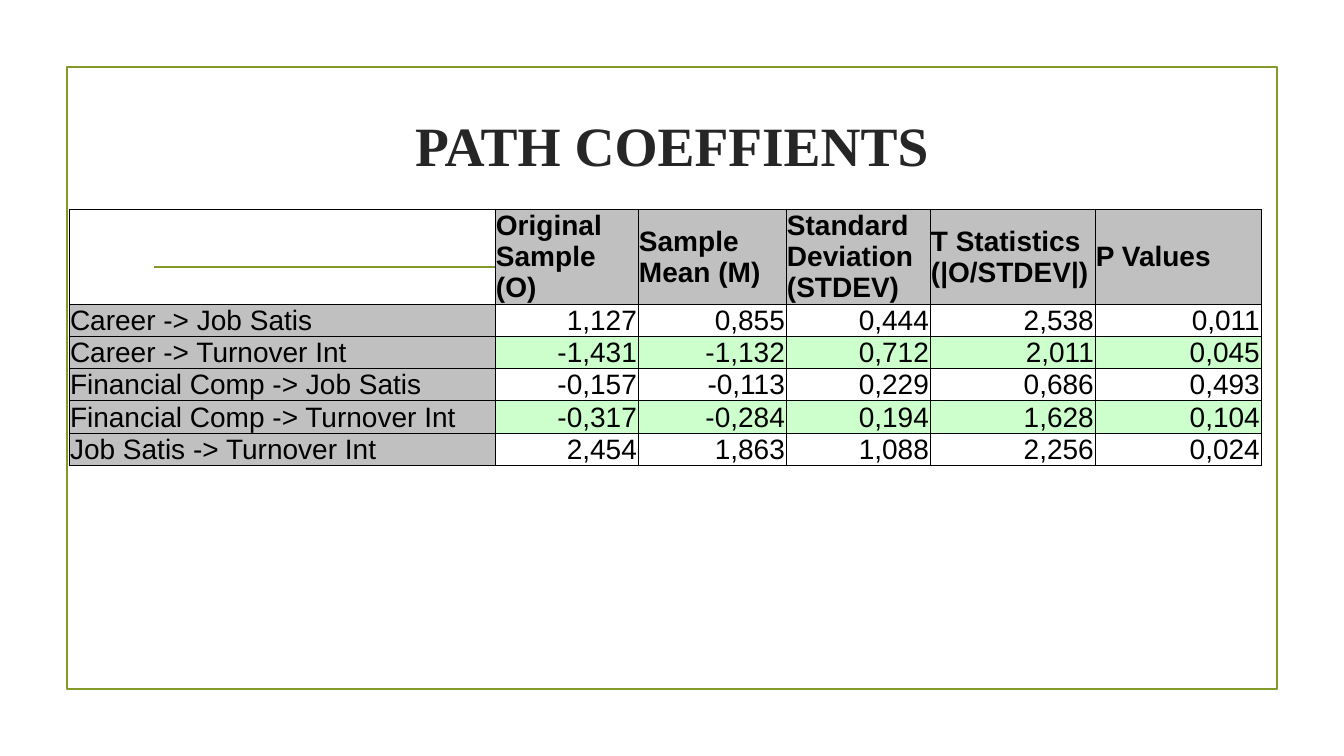
import pptx
import pptx.util
import pptx.dml.color
import pptx.enum.text
import pptx.enum.shapes
import pptx.oxml
import pptx.oxml.ns

TITLE = "PATH COEFFIENTS"
HEAD = ["", "Original Sample (O)", "Sample Mean (M)", "Standard Deviation (STDEV)",
        "T Statistics (|O/STDEV|)", "P Values"]
ROWS = [
    ["Career -> Job Satis", "1,127", "0,855", "0,444", "2,538", "0,011"],
    ["Career -> Turnover Int", "-1,431", "-1,132", "0,712", "2,011", "0,045"],
    ["Financial Comp -> Job Satis", "-0,157", "-0,113", "0,229", "0,686", "0,493"],
    ["Financial Comp -> Turnover Int", "-0,317", "-0,284", "0,194", "1,628", "0,104"],
    ["Job Satis -> Turnover Int", "2,454", "1,863", "1,088", "2,256", "0,024"],
]
COLS = [426, 143, 148, 144, 165, 166]
HEAD_H, ROW_H = 95, 32
COLORS = {"olive": "83992A", "dark": "262626", "black": "000000",
          "gray": "C0C0C0", "green": "CCFFCC"}
ALIGN = pptx.enum.text.PP_ALIGN
MIDDLE = pptx.enum.text.MSO_ANCHOR.MIDDLE


def px(n):
    return pptx.util.Emu(round(n * 914400 / 100.8))


def color(name):
    return pptx.dml.color.RGBColor.from_string(COLORS[name])


def style(par, face, size, tint, bold, align):
    par.font.name = face
    par.font.size = pptx.util.Pt(size)
    par.font.bold = bold
    par.font.color.rgb = color(tint)
    par.alignment = align


def stroke(line):
    line.color.rgb = color("olive")
    line.width = pptx.util.Pt(1.25)


def border(cell):
    props = cell._tc.get_or_add_tcPr()
    for side in ("lnL", "lnR", "lnT", "lnB"):
        props.append(pptx.oxml.parse_xml(
            f'<a:{side} {pptx.oxml.ns.nsdecls("a")} w="6350"><a:solidFill>'
            f'<a:srgbClr val="{COLORS["black"]}"/></a:solidFill></a:{side}>'))


def shade(row, col):
    if row == 0 or col == 0:
        return "gray" if row or col else None
    return "green" if row % 2 == 0 else None


def fill_cell(cell, row, col, text):
    border(cell)
    tint = shade(row, col)
    if tint:
        cell.fill.solid()
        cell.fill.fore_color.rgb = color(tint)
    else:
        cell.fill.background()
    cell.margin_left = cell.margin_right = cell.margin_top = px(1)
    cell.margin_bottom = 0
    cell.vertical_anchor = MIDDLE
    cell.text = text
    align = ALIGN.RIGHT if row and col else ALIGN.LEFT
    style(cell.text_frame.paragraphs[0], "Arial", 20, "black", row == 0, align)


def main():
    deck = pptx.Presentation()
    deck.slide_width, deck.slide_height = px(1344), px(756)
    slide = deck.slides.add_slide(deck.slide_layouts[5])
    shapes = slide.shapes

    frame = shapes.add_shape(pptx.enum.shapes.MSO_SHAPE.RECTANGLE,
                             px(67), px(67), px(1210), px(622))
    frame.shadow.inherit = False
    frame.fill.background()
    stroke(frame.line)

    rule = shapes.add_connector(pptx.enum.shapes.MSO_CONNECTOR.STRAIGHT,
                                px(154), px(267), px(1190), px(267))
    stroke(rule.line)
    rule._element.spPr.append(pptx.oxml.parse_xml(
        f'<a:effectLst {pptx.oxml.ns.nsdecls("a")}/>'))

    title = shapes.title
    title.left, title.top, title.width, title.height = px(143), px(108), px(1058), px(72)
    title.text_frame.text = TITLE
    title.text_frame.vertical_anchor = MIDDLE
    style(title.text_frame.paragraphs[0], "Times New Roman", 39.6, "dark", True, ALIGN.CENTER)

    data = [HEAD] + ROWS
    table = shapes.add_table(len(data), len(COLS), px(69), px(209), px(sum(COLS)),
                             px(HEAD_H + ROW_H * len(ROWS))).table
    for col, width in enumerate(COLS):
        table.columns[col].width = px(width)
    for row, texts in enumerate(data):
        table.rows[row].height = px(ROW_H if row else HEAD_H)
        for col, text in enumerate(texts):
            fill_cell(table.cell(row, col), row, col, text)

    deck.save("out.pptx")


if __name__ == "__main__":
    main()
